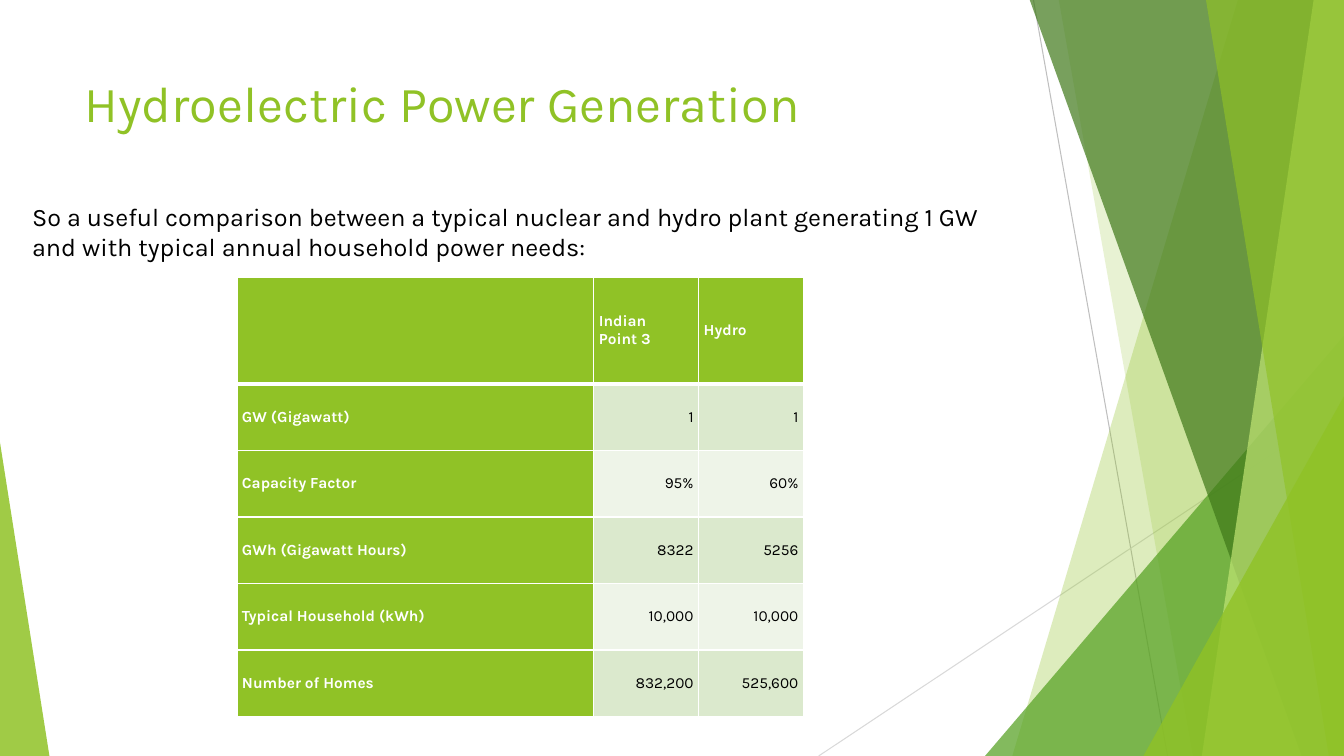
from lxml.etree import SubElement
from pptx import Presentation
from pptx.dml.color import RGBColor
from pptx.enum.shapes import MSO_CONNECTOR as Connector, MSO_SHAPE as Preset
from pptx.enum.text import MSO_ANCHOR as Anchor, PP_ALIGN as Align
from pptx.oxml import parse_xml
from pptx.oxml.ns import nsdecls, qn
from pptx.util import Inches, Pt

GREEN, WHITE, BLACK = "90C226", "FFFFFF", "000000"
BANDS = ("DBE9CD", "EEF4E8")
WIDTH, HEIGHT, TOP = 13.33, 7.5, -0.01


def color(code):
    return RGBColor.from_string(code)


class SlideBuilder:
    """Draws styled elements on the current slide."""

    font = "Karla"

    def __init__(self, slide):
        self.slide = slide
        self.shapes = slide.shapes

    def line(self, start, end, code):
        rule = self.shapes.add_connector(
            Connector.STRAIGHT, *(Inches(v) for v in start + end))
        rule.line.color.rgb = color(code)
        rule.line.width = Pt(0.75)
        SubElement(rule.element.spPr, qn("a:effectLst"))

    def tint(self, shape, code, opacity):
        shape.shadow.inherit = False
        shape.line.fill.background()
        shape.fill.solid()
        shape.fill.fore_color.rgb = color(code)
        fill = shape.element.spPr.find(qn("a:solidFill"))
        SubElement(fill[0], qn("a:alpha"), val=str(opacity * 1000))

    def shard(self, top_left, bottom_left, code, opacity):
        corners = [(top_left, TOP), (WIDTH, TOP), (WIDTH, HEIGHT), (bottom_left, HEIGHT)]
        start, *others = [(Inches(x), Inches(y)) for x, y in corners]
        outline = self.shapes.build_freeform(*start)
        outline.add_line_segments(others, close=True)
        self.tint(outline.convert_to_shape(), code, opacity)

    def triangle(self, box, apex, code, opacity):
        wedge = self.shapes.add_shape(Preset.ISOSCELES_TRIANGLE, *(Inches(v) for v in box))
        wedge.adjustments[0] = apex
        self.tint(wedge, code, opacity)

    def run(self, paragraph, words, size, code, bold=False):
        run = paragraph.add_run()
        run.text = words
        run.font.name = self.font
        run.font.size = Pt(size)
        run.font.bold = bold
        run.font.color.rgb = color(code)

    def text(self, box, lines, size, code):
        frame = self.shapes.add_textbox(*(Inches(v) for v in box)).text_frame
        frame.word_wrap = True
        for index, words in enumerate(lines):
            paragraph = frame.add_paragraph() if index else frame.paragraphs[0]
            self.run(paragraph, words, size, code)

    def borders(self, cell, top, bottom):
        properties = cell._tc.get_or_add_tcPr()
        sides = (("L", 1), ("R", 1), ("T", top), ("B", bottom))
        for index, (side, width) in enumerate(sides):
            properties.insert(index, parse_xml(
                f'<a:ln{side} {nsdecls("a")} w="{Pt(width)}"><a:solidFill>'
                f'<a:srgbClr val="{WHITE}"/></a:solidFill></a:ln{side}>'))

    def cell(self, cell, words, row, column):
        heading = row == 0 or column == 0
        cell.fill.solid()
        cell.fill.fore_color.rgb = color(GREEN if heading else BANDS[(row - 1) % 2])
        self.borders(cell, 3 if row == 1 else 1, 3 if row == 0 else 1)
        cell.vertical_anchor = Anchor.MIDDLE
        cell.margin_left = cell.margin_right = Inches(0.05)
        cell.margin_top = cell.margin_bottom = Inches(0.05)
        paragraph = cell.text_frame.paragraphs[0]
        paragraph.alignment = Align.LEFT if heading else Align.RIGHT
        for index, part in enumerate(words.split("\n") if words else []):
            if index:
                paragraph.add_line_break()
            self.run(paragraph, part, 11, WHITE if heading else BLACK, heading)

    def table(self, left, top, widths, heights, rows):
        box = (left, top, sum(widths), sum(heights))
        grid = self.shapes.add_table(
            len(rows), len(widths), *(Inches(v) for v in box)).table
        for column, width in zip(grid.columns, widths):
            column.width = Inches(width)
        for row, height in zip(grid.rows, heights):
            row.height = Inches(height)
        for r, values in enumerate(rows):
            for c, words in enumerate(values):
                self.cell(grid.cell(r, c), words, r, c)


def main():
    deck = Presentation()
    deck.slide_width, deck.slide_height = Inches(WIDTH), Inches(HEIGHT)
    page = SlideBuilder(deck.slides.add_slide(deck.slide_layouts[6]))

    page.line((10.25, 0), (11.58, HEIGHT), "BFBFBF")
    page.line((WIDTH, 4.03), (8.12, HEIGHT), "D9D9D9")
    page.shard(12.28, 10.04, GREEN, 30)
    page.shard(10.5, 11.83, GREEN, 20)
    page.triangle((9.77, 3.33, 3.56, 4.17), 1, "54A021", 72)
    page.shard(10.21, 12.91, "3F7819", 70)
    page.shard(13.03, 11.92, "C0E474", 70)
    page.shard(11.96, 13.18, GREEN, 65)
    page.triangle((11.34, 3.93, 1.99, 3.57), 1, GREEN, 80)
    page.triangle((0, 4.39, 0.49, 3.11), 0, GREEN, 85)

    page.text((0.74, 0.67, 9.4, 1.44), ["Hydroelectric Power Generation"], 36, GREEN)
    page.text((0.22, 1.95, 10.44, 1.92), [
        "So a useful comparison between a typical nuclear and hydro plant generating 1 GW",
        "and with typical annual household power needs:",
    ], 18, BLACK)
    page.table(2.35, 2.75, [3.54, 1.04, 1.04], [1.06] + [0.66] * 5, [
        ("", "Indian\nPoint 3", "Hydro"),
        ("GW (Gigawatt)", "1", "1"),
        ("Capacity Factor", "95%", "60%"),
        ("GWh (Gigawatt Hours)", "8322", "5256"),
        ("Typical Household (kWh)", "10,000", "10,000"),
        ("Number of Homes", "832,200", "525,600"),
    ])
    deck.save("out.pptx")


if __name__ == "__main__":
    main()
